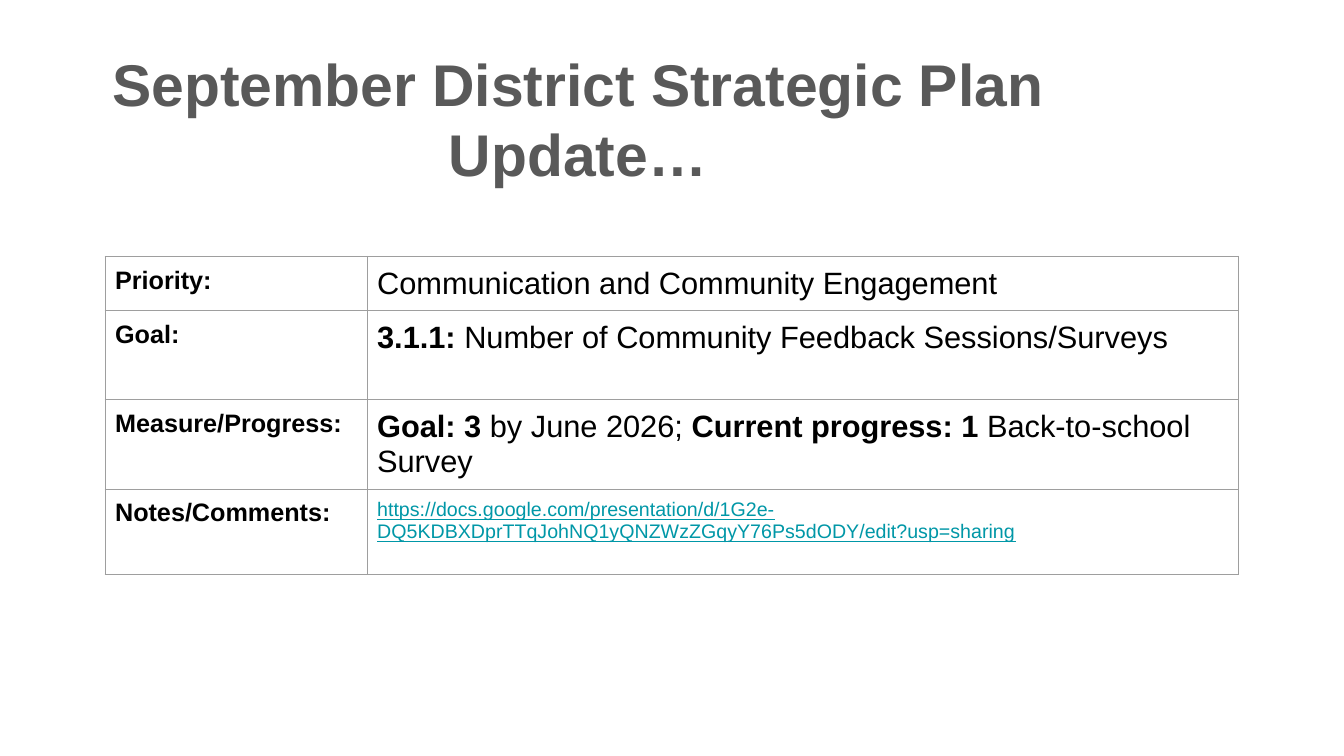
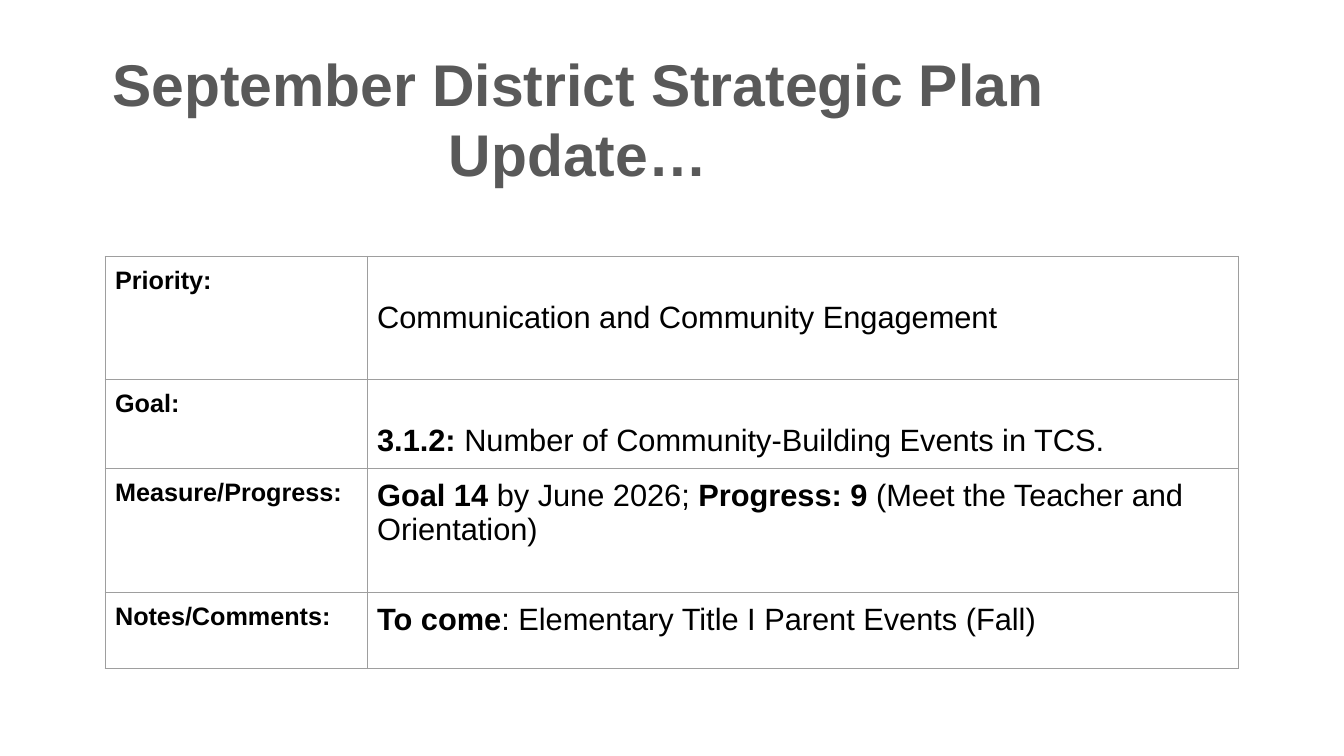
from dataclasses import dataclass

from pptx import Presentation
from pptx.dml.color import RGBColor
from pptx.enum.text import MSO_ANCHOR, MSO_AUTO_SIZE, PP_ALIGN
from pptx.oxml import parse_xml
from pptx.oxml.ns import nsdecls
from pptx.util import Pt

TOP, MIDDLE, BOTTOM = MSO_ANCHOR.TOP, MSO_ANCHOR.MIDDLE, MSO_ANCHOR.BOTTOM
CENTER = PP_ALIGN.CENTER
NO_AUTOFIT = MSO_AUTO_SIZE.NONE
TITLE_ONLY = 5


@dataclass(frozen=True)
class Theme:
    font: str = "Arial"
    title: RGBColor = RGBColor(0x59, 0x59, 0x59)
    text: RGBColor = RGBColor(0, 0, 0)
    link: RGBColor = RGBColor(0x00, 0x97, 0xA7)
    border: str = "9E9E9E"
    title_size: float = 42
    title_leading: float = 50
    label_size: float = 18
    body_size: float = 22
    link_size: float = 14
    border_width: float = 0.75
    inset: float = 7.2


THEME = Theme()
SLIDE_SIZE = (960, 540)
TITLE_BOX = (33.8, 27.4, 758.2, 97.2)
TABLE_BOX = (75, 183, 810)
LABEL_WIDTH = 187.2
TITLE = "September District Strategic Plan Update…"
LABELS = ("Priority:", "Goal:", "Measure/Progress:", "Notes/Comments:")


@dataclass(frozen=True)
class Entry:
    height: float
    runs: tuple
    anchor: MSO_ANCHOR = TOP
    is_link: bool = False


UPDATES = (
    (
        Entry(38.6, (("Communication and Community Engagement", False),)),
        Entry(63.6, (("3.1.1:", True),
                     (" Number of Community Feedback Sessions/Surveys", False))),
        Entry(63.6, (("Goal: 3", True), (" by June 2026; ", False),
                     ("Current progress: 1", True),
                     (" Back-to-school Survey", False))),
        Entry(61.4, (("https://docs.google.com/presentation/d/1G2e-DQ5KDBXDprTTqJohNQ1yQNZWzZGqyY76Ps5dODY/edit?usp=sharing", False),),
              is_link=True),
    ),
    (
        Entry(88, (("Communication and Community Engagement", False),), MIDDLE),
        Entry(63.6, (("3.1.2:", True),
                     (" Number of Community-Building Events in TCS.", False)), BOTTOM),
        Entry(88.4, (("Goal 14 ", True), ("by June 2026; ", False),
                     ("Progress: 9", True),
                     (" (Meet the Teacher and Orientation)", False))),
        Entry(54.2, (("To come", True),
                     (": Elementary Title I Parent Events (Fall)", False))),
    ),
)


def set_insets(target):
    for side in ("left", "top", "right", "bottom"):
        setattr(target, f"margin_{side}", Pt(THEME.inset))


def set_font(font, size, color, bold=None):
    font.name = THEME.font
    font.size = Pt(size)
    font.color.rgb = color
    font.bold = bold


def add_title(slide, box):
    sp = slide.shapes.title
    sp.left, sp.top, sp.width, sp.height = map(Pt, box)
    tf = sp.text_frame
    tf.text = TITLE
    tf.word_wrap = True
    tf.auto_size = NO_AUTOFIT
    tf.vertical_anchor = TOP
    set_insets(tf)
    p = tf.paragraphs[0]
    p.alignment = CENTER
    p.line_spacing = Pt(THEME.title_leading)
    set_font(p.font, THEME.title_size, THEME.title, True)


def style_cell(cell, anchor):
    cell.fill.background()
    cell.vertical_anchor = anchor
    set_insets(cell)
    tcPr = cell._tc.get_or_add_tcPr()
    for i, side in enumerate("LRTB"):
        tcPr.insert(i, parse_xml(
            f'<a:ln{side} {nsdecls("a")} w="{Pt(THEME.border_width)}">'
            f'<a:solidFill><a:srgbClr val="{THEME.border}"/></a:solidFill>'
            f'</a:ln{side}>'))


def fill_label(cell, label):
    style_cell(cell, TOP)
    cell.text = label
    set_font(cell.text_frame.paragraphs[0].font, THEME.label_size, THEME.text, True)


def fill_entry(cell, entry):
    style_cell(cell, entry.anchor)
    p = cell.text_frame.paragraphs[0]
    if entry.is_link:
        set_font(p.font, THEME.link_size, THEME.link)
        p.font.underline = True
    else:
        set_font(p.font, THEME.body_size, THEME.text)
    for text, bold in entry.runs:
        r = p.add_run()
        r.text = text
        r.font.bold = bold


def add_update_table(slide, box, entries):
    left, top, width = box
    height = sum(entry.height for entry in entries)
    table = slide.shapes.add_table(
        len(entries), 2, Pt(left), Pt(top), Pt(width), Pt(height)).table
    table.first_row = False
    table.horz_banding = False
    table.columns[0].width = Pt(LABEL_WIDTH)
    table.columns[1].width = Pt(width - LABEL_WIDTH)
    for row, label, entry in zip(table.rows, LABELS, entries):
        row.height = Pt(entry.height)
        fill_label(row.cells[0], label)
        fill_entry(row.cells[1], entry)


def add_update_slide(prs, entries):
    slide = prs.slides.add_slide(prs.slide_layouts[TITLE_ONLY])
    add_title(slide, TITLE_BOX)
    add_update_table(slide, TABLE_BOX, entries)


def main():
    prs = Presentation()
    prs.slide_width, prs.slide_height = map(Pt, SLIDE_SIZE)
    for entries in UPDATES:
        add_update_slide(prs, entries)
    prs.save("out.pptx")


if __name__ == "__main__":
    main()
